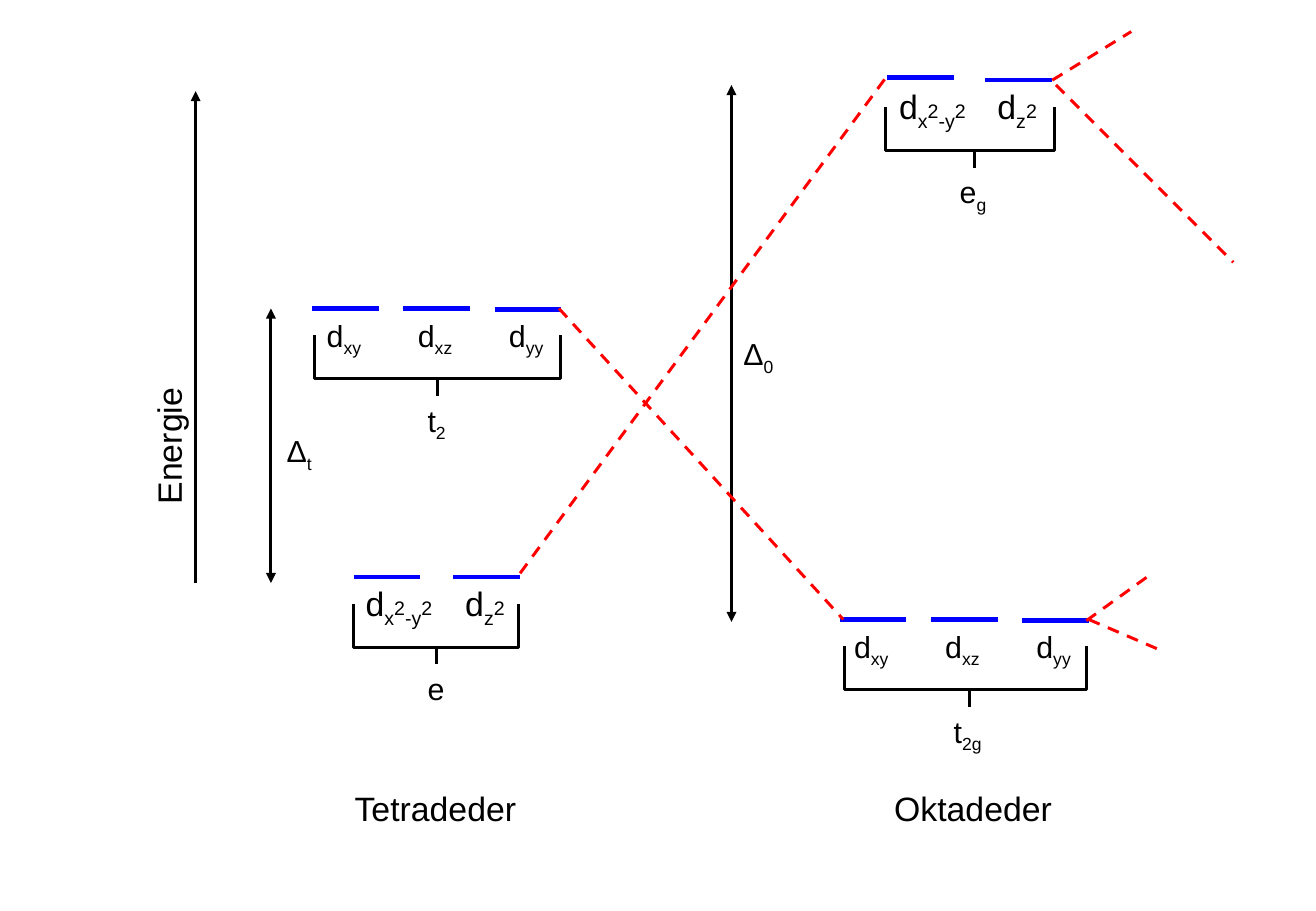
"""Build a slide comparing tetrahedral and octahedral d-orbital splitting."""
from lxml.etree import SubElement
from pptx import Presentation
from pptx.dml.color import RGBColor
from pptx.enum.dml import MSO_LINE
from pptx.enum.shapes import MSO_CONNECTOR
from pptx.enum.text import MSO_AUTO_SIZE
from pptx.oxml.ns import qn
from pptx.util import Inches, Pt

BLACK, BLUE, RED = "000000", "0000FF", "FF0000"
LEVEL_LENGTH = 0.55
LABEL_HEIGHT = {18: 0.4, 20: 0.44}
SUB, RAISED = -25, 4


def add_line(shapes, start, end, color=BLACK, width=1.75, dash=None, arrows=()):
    """Draw a straight line, with arrowheads at the named ends."""
    points = [Inches(value) for value in (*start, *end)]
    connector = shapes.add_connector(MSO_CONNECTOR.STRAIGHT, *points)
    connector.line.color.rgb = RGBColor.from_string(color)
    connector.line.width = Pt(width)
    if dash:
        connector.line.dash_style = dash
    properties = connector._element.spPr
    for arrow in arrows:
        SubElement(properties.find(qn("a:ln")), qn(f"a:{arrow}"), type="triangle")
    SubElement(properties, qn("a:effectLst"))


def add_label(shapes, left, top, width, parts, size=18, rotation=0):
    """Write a label from (text, baseline percent) parts."""
    box = shapes.add_textbox(*map(Inches, (left, top, width, LABEL_HEIGHT[size])))
    box.rotation = rotation
    frame = box.text_frame
    frame.word_wrap = False
    frame.auto_size = MSO_AUTO_SIZE.SHAPE_TO_FIT_TEXT
    paragraph = frame.paragraphs[0]
    paragraph.font.name = "Arial"
    paragraph.font.size = Pt(size)
    paragraph.font.color.rgb = RGBColor.from_string(BLACK)
    for text, baseline in parts:
        run = paragraph.add_run()
        run.text = text
        if baseline:
            run._r.get_or_add_rPr().set("baseline", str(baseline * 1000))


presentation = Presentation()
presentation.slide_width = Inches(10.83)
presentation.slide_height = Inches(7.5)
slide = presentation.slides.add_slide(presentation.slide_layouts[6])

add_line(slide.shapes, (1.61, 4.8), (1.61, 0.75), arrows=["tailEnd"])
add_label(slide.shapes, 0.75, 3.39, 1.28, [("Energie", 0)], 20, 270)

splittings = [
    (2.23, 4.8, 2.54, 2.26, 3.51, 0.42, "t"),
    (6.02, 5.12, 0.7, 6.02, 2.71, 0.46, "0"),
]
for x, bottom, top, left, label_top, width, index in splittings:
    add_line(slide.shapes, (x, bottom), (x, top), arrows=["headEnd", "tailEnd"])
    add_label(slide.shapes, left, label_top, width, [("Δ", 0), (index, SUB)])

t_orbitals = [(0.51, [("d", 0), (index, SUB)]) for index in ("xy", "xz", "yy")]
e_orbitals = [
    (0.81, [("d", 0), ("x", SUB), ("2", RAISED), ("-y", SUB), ("2", RAISED)]),
    (0.55, [("d", 0), ("z", SUB), ("2", RAISED)]),
]

level_sets = [
    (t_orbitals, 18, 2.57, 0.75, (2.54, 2.54, 2.55), (0.02, 2.56),
     (2.59, 3.6, 4.61, 2.76), 0.36, [("t", 0), ("2", SUB)]),
    (e_orbitals, 20, 2.91, 0.82, (4.75, 4.75), (0, 4.75),
     (2.91, 3.59, 4.27, 4.97), 0.34, [("e", 0)]),
    (e_orbitals, 20, 7.3, 0.81, (0.64, 0.66), (0, 0.66),
     (7.29, 8.02, 8.68, 0.88), 0.44, [("e", 0), ("g", SUB)]),
    (t_orbitals, 18, 6.91, 0.75, (5.1, 5.1, 5.11), (0.02, 5.12),
     (6.95, 7.98, 8.94, 5.32), 0.46, [("t", 0), ("2g", SUB)]),
]
for orbitals, size, left, step, heights, offset, bracket, name_width, name in level_sets:
    shapes = slide.shapes.add_group_shape().shapes
    indent, label_top = offset
    for column, ((width, parts), y) in enumerate(zip(orbitals, heights)):
        x = left + column * step
        add_label(shapes, x + indent, label_top, width, parts, size)
        add_line(shapes, (x, y), (x + LEVEL_LENGTH, y), BLUE, 2.75)

    start, stem, end, top = map(Inches, bracket)
    bar, tip = top + Inches(0.36), top + Inches(0.5)
    builder = shapes.build_freeform(start, top)
    builder.add_line_segments([(start, bar), (end, bar), (end, top)], close=False)
    builder.move_to(stem, bar)
    builder.add_line_segments([(stem, tip)], close=False)
    outline = builder.convert_to_shape()
    outline.shadow.inherit = False
    outline.fill.background()
    outline.line.color.rgb = RGBColor.from_string(BLACK)
    outline.line.width = Pt(1.75)
    add_label(shapes, bracket[1] - name_width / 2, bracket[3] + 0.5, name_width, name)

correlations = [
    ((4.28, 4.72), (7.29, 0.64)),
    ((4.6, 2.54), (6.94, 5.1)),
    ((8.66, 0.66), (9.31, 0.26)),
    ((8.69, 0.7), (10.15, 2.16)),
    ((8.94, 5.11), (9.44, 4.75)),
    ((8.96, 5.1), (9.52, 5.34)),
]
for start, end in correlations:
    add_line(slide.shapes, start, end, RED, dash=MSO_LINE.DASH)

for left, width, geometry in [(2.82, 1.54, "Tetradeder"), (7.26, 1.51, "Oktadeder")]:
    add_label(slide.shapes, left, 6.44, width, [(geometry, 0)], 20)

presentation.save("out.pptx")
